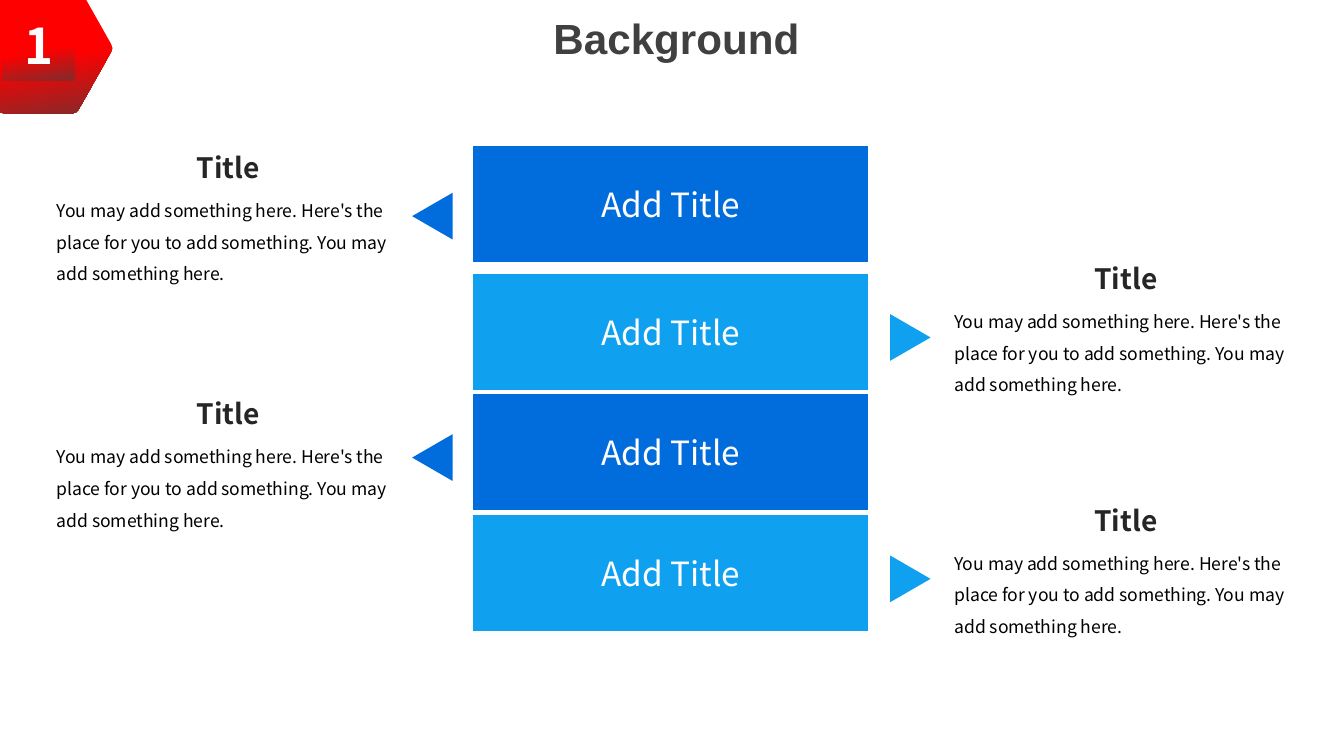
from math import cos, radians, sin

from pptx import Presentation
from pptx.dml.color import RGBColor
from pptx.enum.shapes import MSO_SHAPE as Shape
from pptx.enum.text import MSO_ANCHOR as Anchor, PP_ALIGN as Align
from pptx.util import Pt

PX = 9144  # EMU per px, 100 px to the inch
FONT = "Noto Sans CJK SC"
HEADING_FONT = "Arial"
WHITE = RGBColor(0xFF, 0xFF, 0xFF)
BLACK = RGBColor(0, 0, 0)
GREY = RGBColor(0x40, 0x40, 0x40)
DARK = RGBColor(0x26, 0x26, 0x26)
BLUE = RGBColor(0x01, 0x6D, 0xDC)
SKY = RGBColor(0x0F, 0xA1, 0xF0)
RED = RGBColor(0xFF, 0, 0)
MAROON = RGBColor(0x83, 0x2B, 0x2B)

BODY = ("You may add something here. Here's the place for you to add "
        "something. You may add something here.")
# bar top, arrow centre, note top
ROWS = [(114, 171, 114), (215, 267, 202), (310, 362, 309), (406, 458, 393)]


def px(*lengths):
    return [round(length * PX) for length in lengths]


def write(para, text, size, color, bold=False, font=FONT, align=Align.CENTER):
    para.text = text
    para.alignment = align
    para.font.name = font
    para.font.size = Pt(size)
    para.font.bold = bold
    para.font.color.rgb = color


def clear_margins(frame):
    frame.margin_left = frame.margin_right = 0
    frame.margin_top = frame.margin_bottom = 0


def fill_red(shape):
    shape.shadow.inherit = False
    shape.line.fill.background()
    shape.fill.gradient()
    shape.fill.gradient_angle = 280
    stops = shape.fill.gradient_stops
    for stop, position, color in zip(stops, (0.57, 1), (RED, MAROON)):
        stop.position = position
        stop.color.rgb = color


def add_heading(page, left, top, width, height):
    title = page.shapes.title
    title.left, title.top, title.width, title.height = px(left, top, width, height)
    frame = title.text_frame
    clear_margins(frame)
    frame.vertical_anchor = Anchor.TOP
    write(frame.paragraphs[0], "Background", 24, GREY, True, HEADING_FONT)


def add_badge(page, center_x, center_y, radius):
    """Hexagon with softened corners, running off the slide's corner."""
    points = []
    for corner in range(0, 360, 60):
        for turn, inset in ((-3, 2), (0, 1), (3, 2)):
            angle = radians(corner + turn)
            reach = radius - inset
            points.append((center_x + reach * cos(angle),
                           center_y + reach * sin(angle)))
    outline = page.shapes.build_freeform(*points[0], scale=PX)
    outline.add_line_segments(points[1:], close=True)
    fill_red(outline.convert_to_shape())

    box = page.shapes.add_shape(
        Shape.RECTANGLE, *px(center_x - 28, center_y - 31, 57, 57))
    fill_red(box)
    clear_margins(box.text_frame)
    box.text_frame.vertical_anchor = Anchor.MIDDLE
    write(box.text_frame.paragraphs[0], "1", 28, WHITE, True)


def add_bar(page, left, top, width, height, color):
    bar = page.shapes.add_shape(Shape.RECTANGLE, *px(left, top, width, height))
    bar.shadow.inherit = False
    bar.fill.solid()
    bar.fill.fore_color.rgb = color
    bar.line.color.rgb = WHITE
    bar.line.width = Pt(2)
    bar.text_frame.vertical_anchor = Anchor.MIDDLE
    write(bar.text_frame.paragraphs[0], "Add Title", 19, WHITE)


def add_arrow(page, center_x, center_y, rotation, color):
    width, height = 37, 32
    arrow = page.shapes.add_shape(
        Shape.ISOSCELES_TRIANGLE,
        *px(center_x - width / 2, center_y - height / 2, width, height))
    arrow.rotation = rotation
    arrow.shadow.inherit = False
    arrow.fill.solid()
    arrow.fill.fore_color.rgb = color
    arrow.line.fill.background()


def add_note(page, left, top, width, height):
    frame = page.shapes.add_textbox(*px(left, top, width, height)).text_frame
    frame.word_wrap = True
    write(frame.paragraphs[0], "Title", 16, DARK, True)
    body = frame.add_paragraph()
    write(body, BODY, 10, BLACK, align=Align.LEFT)
    body.line_spacing = 1.5
    body.space_before = Pt(3)


def add_rows(page, left, width):
    """Stack of bars whose notes alternate between left and right."""
    right = left + width
    for index, (bar_top, arrow_y, note_top) in enumerate(ROWS):
        if index % 2 == 0:
            color, arrow_x, rotation, note_left = BLUE, left - 31, 270, left - 338
        else:
            color, arrow_x, rotation, note_left = SKY, right + 32, 90, right + 57
        add_bar(page, left, bar_top, width, 95, color)
        add_arrow(page, arrow_x, arrow_y, rotation, color)
        add_note(page, note_left, note_top, 291, 119)


def main():
    deck = Presentation()
    deck.slide_width, deck.slide_height = px(1063, 591)
    page = deck.slides.add_slide(deck.slide_layouts[5])
    add_rows(page, 373, 315)
    add_badge(page, 30, 38, 60)
    add_heading(page, 425, 10, 220, 40)
    deck.save("out.pptx")


if __name__ == "__main__":
    main()
